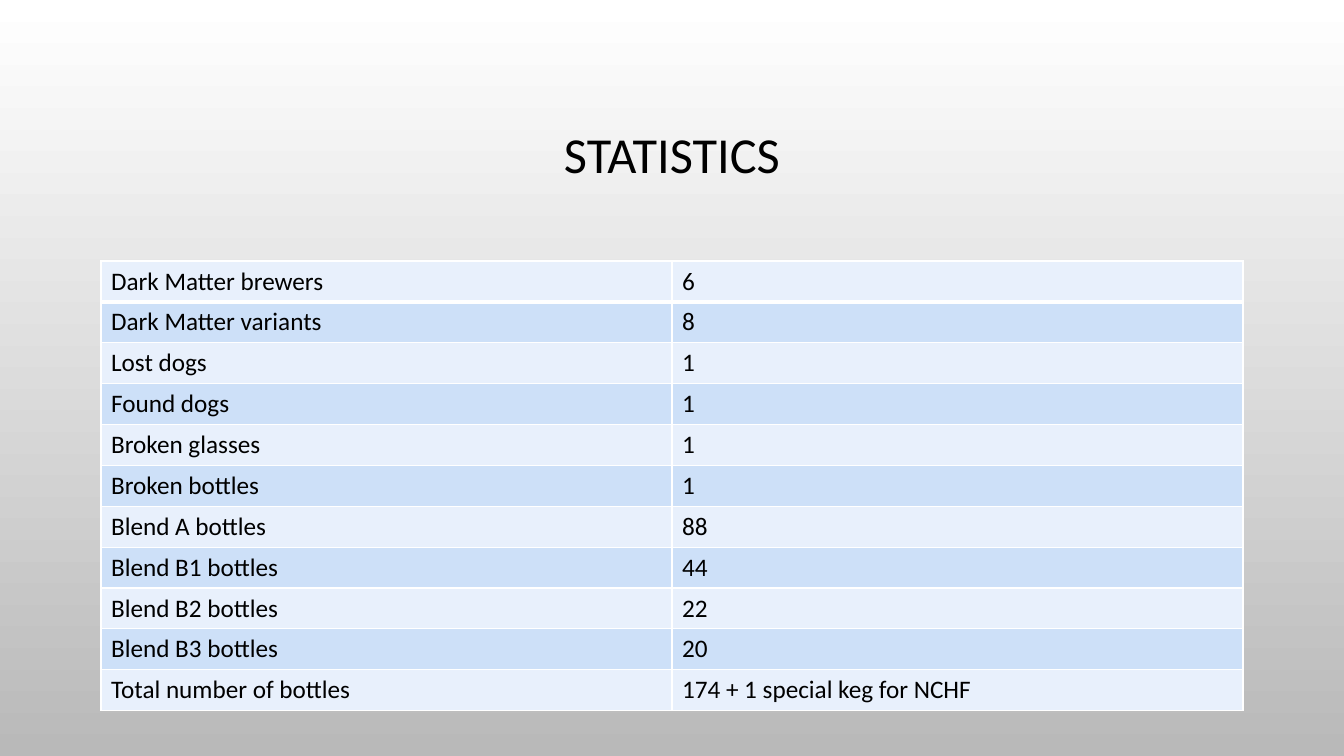
from lxml import etree
from pptx import Presentation
from pptx.dml.color import RGBColor
from pptx.enum.text import MSO_ANCHOR, PP_ALIGN
from pptx.oxml.ns import qn
from pptx.util import Pt

MIDDLE = MSO_ANCHOR.MIDDLE
CENTER = PP_ALIGN.CENTER
PX = 914400 / 100.8

THEME = {
    "font": "Calibri", "title": 36, "body": 18,
    "text": "000000", "line": "FFFFFF",
    "back": ["FFFFFF", "B9B9B9"], "bands": ["E8F0FC", "CDE0F8"],
}

ROWS = [
    ("Dark Matter brewers", "6"),
    ("Dark Matter variants", "8"),
    ("Lost dogs", "1"),
    ("Found dogs", "1"),
    ("Broken glasses", "1"),
    ("Broken bottles", "1"),
    ("Blend A bottles", "88"),
    ("Blend B1 bottles", "44"),
    ("Blend B2 bottles", "22"),
    ("Blend B3 bottles", "20"),
    ("Total number of bottles", "174 + 1 special keg for NCHF"),
]


def px(*sizes):
    return [round(size * PX) for size in sizes]


def style(para, size):
    para.font.name = THEME["font"]
    para.font.size = Pt(size)
    para.font.color.rgb = RGBColor.from_string(THEME["text"])


deck = Presentation()
deck.slide_width, deck.slide_height = px(1344, 756)
slide = deck.slides.add_slide(deck.slide_layouts[5])

# Background, fading from top to bottom
back = slide.background.fill
back.gradient()
back.gradient_angle = 270
for stop, color in zip(back.gradient_stops, THEME["back"]):
    stop.color.rgb = RGBColor.from_string(color)

# Title
title = slide.shapes.title
title.left, title.top, title.width, title.height = px(101, 69, 1142, 176)
title.text_frame.text = "STATISTICS"
title.text_frame.vertical_anchor = MIDDLE
head = title.text_frame.paragraphs[0]
head.alignment = CENTER
head.line_spacing = 0.9
style(head, THEME["title"])

# Table
table = slide.shapes.add_table(len(ROWS), 2, *px(101, 261, 1142, 450)).table
table.first_row = False
table.horz_banding = False
for r, row in enumerate(ROWS):
    for c, text in enumerate(row):
        cell = table.cell(r, c)
        cell.text = text
        style(cell.text_frame.paragraphs[0], THEME["body"])

        # Borders, with a thick rule under the first row
        props = cell._tc.get_or_add_tcPr()
        for side in ("lnL", "lnR", "lnT", "lnB"):
            thick = (r, side) in [(0, "lnB"), (1, "lnT")]
            line = etree.SubElement(props, qn(f"a:{side}"), w=str(Pt(3 if thick else 1)))
            fill = etree.SubElement(line, qn("a:solidFill"))
            etree.SubElement(fill, qn("a:srgbClr"), val=THEME["line"])

        cell.fill.solid()
        cell.fill.fore_color.rgb = RGBColor.from_string(THEME["bands"][r % 2])

deck.save("out.pptx")
